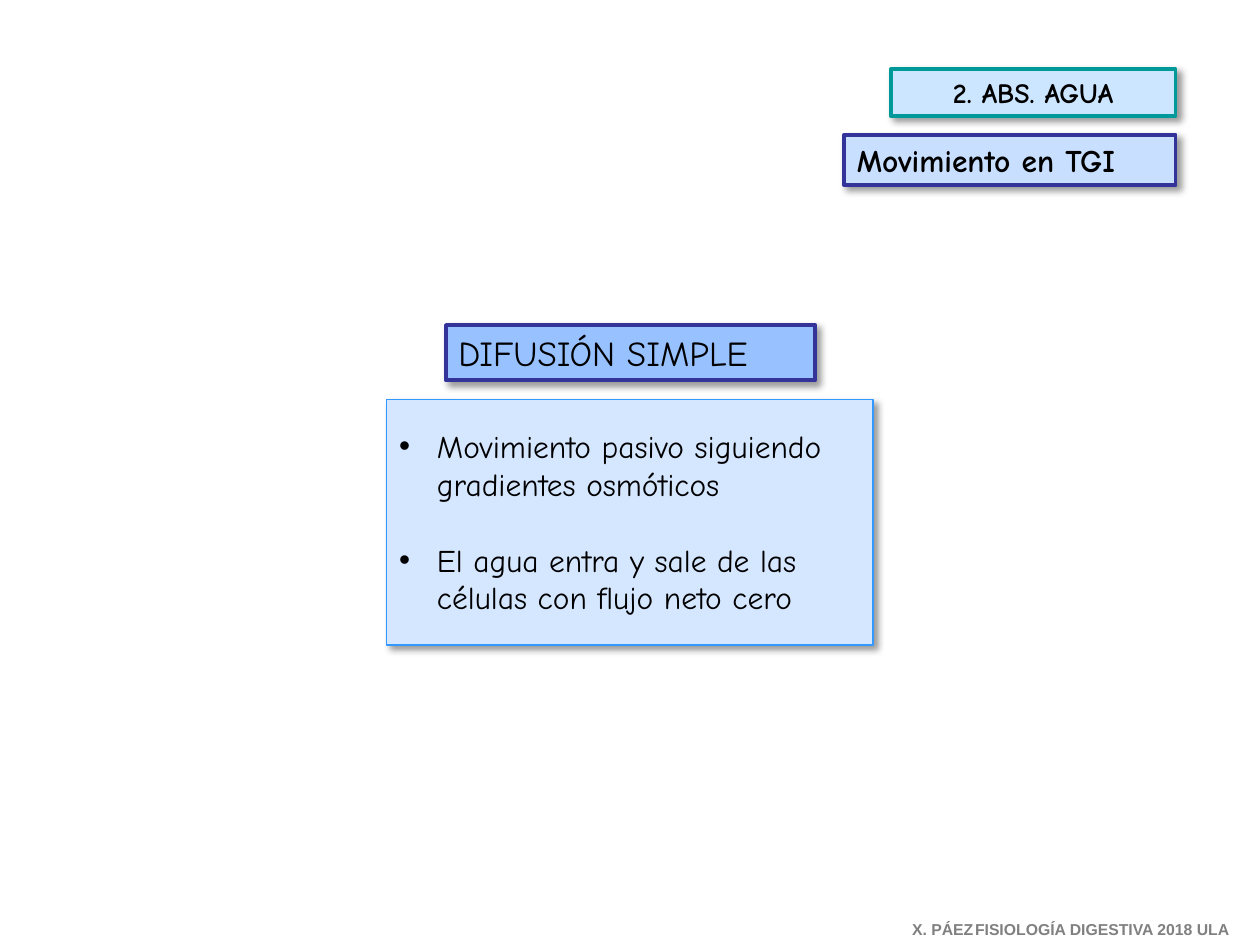
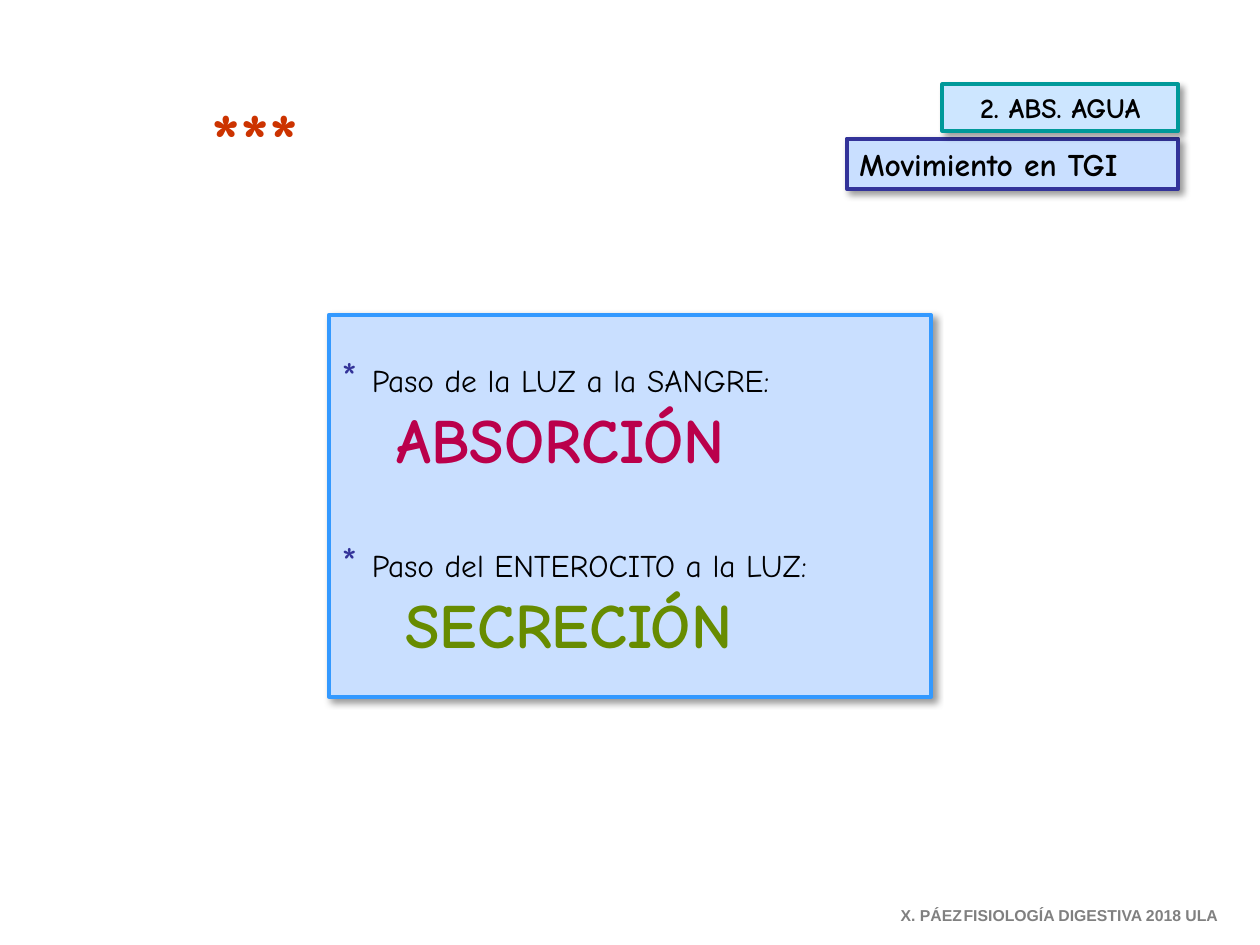
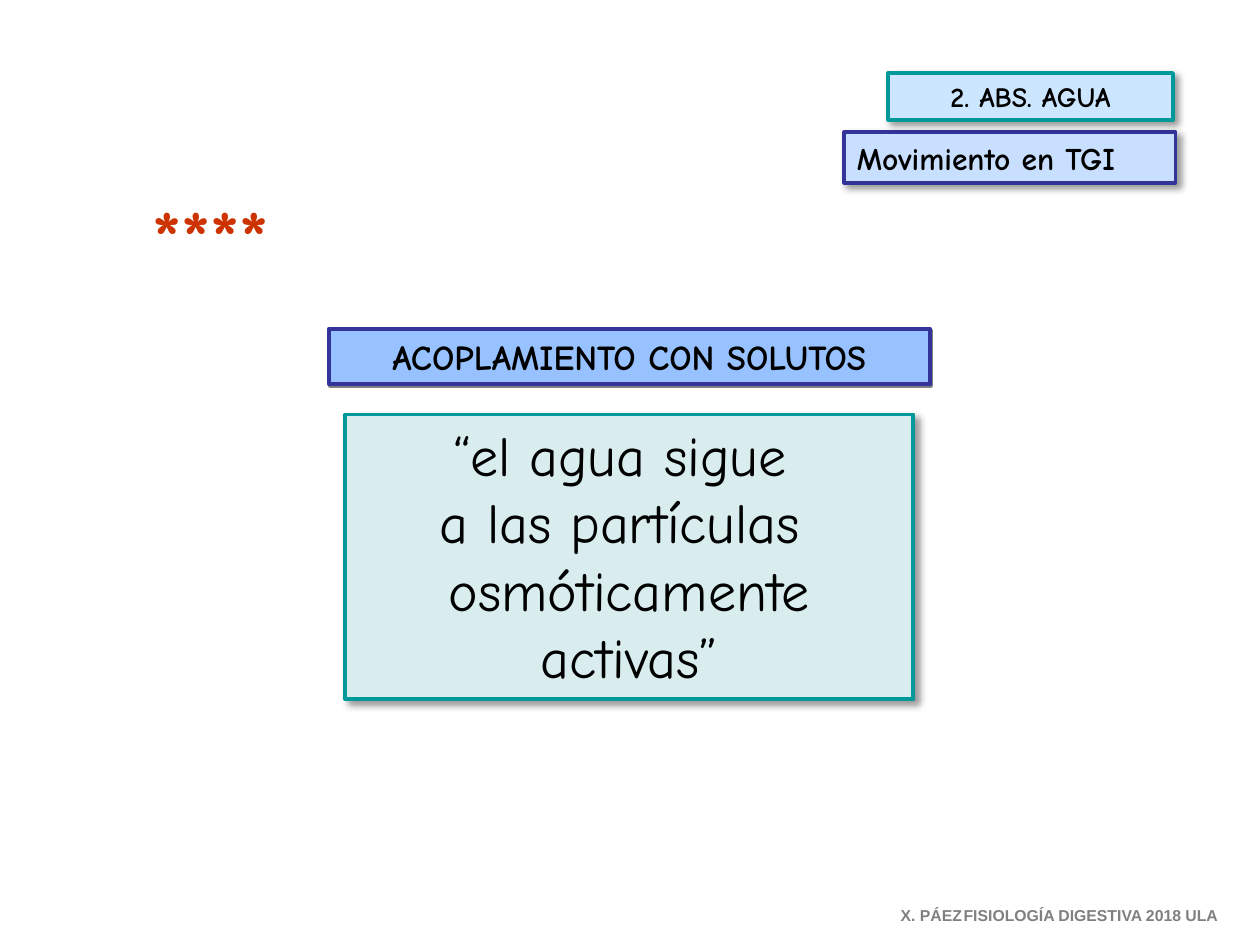
from dataclasses import dataclass

from lxml.etree import SubElement
from pptx import Presentation
from pptx.dml.color import RGBColor
from pptx.enum.shapes import MSO_SHAPE
from pptx.enum.text import MSO_ANCHOR, MSO_AUTO_SIZE, PP_ALIGN
from pptx.oxml.ns import qn
from pptx.util import Inches, Pt


@dataclass(frozen=True)
class Theme:
    font: str = "Comic Neue"
    footer_font: str = "Arial"
    black: str = "000000"
    grey: str = "808080"
    navy: str = "333399"
    sky: str = "3399FF"
    teal: str = "009999"
    pale_cyan: str = "CDE6FF"
    pale_blue: str = "C9DFFF"
    light_blue: str = "D5E6FF"
    mid_blue: str = "97C1FF"
    pale_teal: str = "D9EDEF"
    red: str = "CC3300"
    crimson: str = "BA004B"
    olive: str = "678C00"
    footer_size: int = 9
    tag_size: int = 16
    body_size: int = 18
    heading_size: int = 20
    star_size: int = 24
    quote_size: int = 32
    term_size: int = 36
    rating_size: int = 44
    thin: float = 0.75
    thick: float = 2.25


THEME = Theme()
# Colour, opacity %, blur pt, distance pt, angle in degrees
SOFT_SHADOW = (THEME.black, 40, 4, 3, 45)
HARD_SHADOW = (THEME.grey, 100, 0, 1, 51)


def set_values(target, values):
    for name, value in values.items():
        setattr(target, name, value)


def add_shadow(effects, shadow):
    color, opacity, blur, distance, angle = shadow
    outer = SubElement(effects, qn("a:outerShdw"), blurRad=str(Pt(blur)),
                       dist=str(Pt(distance)), dir=str(angle * 60000),
                       algn="ctr", rotWithShape="0")
    fill = SubElement(outer, qn("a:srgbClr"), val=color)
    SubElement(fill, qn("a:alpha"), val=str(opacity * 1000))


def place(shape, box):
    lengths = [Inches(value) for value in box]
    set_values(shape, dict(zip(("left", "top", "width", "height"), lengths)))


def prepare_text(shape, top_margin=0.05):
    set_values(shape.text_frame, {
        "word_wrap": True, "auto_size": MSO_AUTO_SIZE.NONE,
        "vertical_anchor": MSO_ANCHOR.TOP,
        "margin_left": Inches(0.1), "margin_right": Inches(0.1),
        "margin_top": Inches(top_margin), "margin_bottom": Inches(0.05)})


def style_panel(shape, box, fill, line, width=THEME.thick,
                shadow=SOFT_SHADOW, top_margin=0.05):
    place(shape, box)
    shape.fill.solid()
    shape.fill.fore_color.rgb = RGBColor.from_string(fill)
    shape.line.color.rgb = RGBColor.from_string(line)
    shape.line.width = Pt(width)
    shape.shadow.inherit = False
    add_shadow(shape.element.spPr.find(qn("a:effectLst")), shadow)
    prepare_text(shape, top_margin)
    return shape


def add_panel(slide, box, fill, line, **options):
    shape = slide.shapes.add_shape(MSO_SHAPE.RECTANGLE, 0, 0, 0, 0)
    return style_panel(shape, box, fill, line, **options)


def add_text_box(slide, box):
    shape = slide.shapes.add_textbox(0, 0, 0, 0)
    place(shape, box)
    prepare_text(shape)
    return shape


def add_run(paragraph, text, size, color=THEME.black, bold=False, name=THEME.font):
    run = paragraph.add_run()
    run.text = text
    set_values(run.font, {"size": Pt(size), "bold": bold, "name": name})
    run.font.color.rgb = RGBColor.from_string(color)
    return run


def next_paragraph(shape, centred=False, space_before=0, indent=0.0, hanging=0.0):
    frame = shape.text_frame
    first = frame.paragraphs[0]
    paragraph = frame.add_paragraph() if first.runs else first
    set_values(paragraph, {
        "alignment": PP_ALIGN.CENTER if centred else PP_ALIGN.LEFT,
        "space_before": Pt(space_before), "space_after": Pt(0)})
    properties = paragraph._p.get_or_add_pPr()
    properties.set("marL", str(Inches(indent)))
    properties.set("indent", str(-Inches(hanging)))
    return paragraph


def add_topic(slide, tag_box, title_box):
    """Section tag and, below it, the slide title."""
    title = style_panel(slide.shapes.title, title_box, THEME.pale_blue, THEME.navy)
    add_run(next_paragraph(title), "Movimiento en TGI", THEME.body_size, bold=True)
    tag = add_panel(slide, tag_box, THEME.pale_cyan, THEME.teal)
    add_run(next_paragraph(tag, centred=True), "2. ABS. AGUA", THEME.tag_size, bold=True)


def add_footer(slide, left, top):
    footer = add_text_box(slide, (left, top, 2.9, 0.25))
    paragraph = next_paragraph(footer)
    tabs = SubElement(paragraph._p.get_or_add_pPr(), qn("a:tabLst"))
    SubElement(tabs, qn("a:tab"), pos=str(Inches(0.59)), algn="l")
    add_run(paragraph, "X. PÁEZ\tFISIOLOGÍA DIGESTIVA 2018 ULA", THEME.footer_size,
            THEME.grey, bold=True, name=THEME.footer_font)


def add_rating(slide, box, count):
    """Row of asterisks with a text shadow."""
    rating = add_text_box(slide, box)
    rating.text_frame.word_wrap = False
    run = add_run(next_paragraph(rating), "*" * count, THEME.rating_size,
                  THEME.red, bold=True)
    fill = run.font._element.find(qn("a:solidFill"))
    effects = SubElement(run.font._element, qn("a:effectLst"))
    add_shadow(effects, (THEME.black, 100, 0, 3, 45))
    fill.addnext(effects)


def add_heading(slide, box, text, centred=False, bold=False, shadow=SOFT_SHADOW):
    heading = add_panel(slide, box, THEME.mid_blue, THEME.navy, shadow=shadow)
    add_run(next_paragraph(heading, centred), text, THEME.heading_size, bold=bold)


def add_bullets(slide, box, items):
    panel = add_panel(slide, box, THEME.light_blue, THEME.sky,
                      width=THEME.thin, top_margin=0.22)
    for index, item in enumerate(items):
        paragraph = next_paragraph(panel, space_before=21.6 if index else 0,
                                   indent=0.3, hanging=0.3)
        properties = paragraph._p.get_or_add_pPr()
        SubElement(properties, qn("a:buFont"), typeface="Arial")
        SubElement(properties, qn("a:buChar"), char="•")
        add_run(paragraph, item, THEME.body_size)


def add_definitions(slide, box, definitions):
    """Each definition is a starred sentence with its term in large type below."""
    panel = add_panel(slide, box, THEME.pale_blue, THEME.sky, top_margin=0.28)
    for index, (sentence, term, color, indent) in enumerate(definitions):
        paragraph = next_paragraph(panel, space_before=33.6 if index else 0)
        add_run(paragraph, "* ", THEME.star_size, THEME.navy)
        add_run(paragraph, sentence, THEME.body_size)
        add_run(next_paragraph(panel, indent=indent), term, THEME.term_size,
                color, bold=True)


def add_quote(slide, box, lines):
    panel = add_panel(slide, box, THEME.pale_teal, THEME.teal)
    for line in lines:
        add_run(next_paragraph(panel, centred=True), line, THEME.quote_size)


def build_diffusion(slide):
    add_topic(slide, (7.07, 0.55, 2.26, 0.37), (6.7, 1.07, 2.63, 0.4))
    add_bullets(slide, (3.07, 3.17, 3.86, 1.95), (
        "Movimiento pasivo siguiendo gradientes osmóticos",
        "El agua entra y sale de las células con flujo neto cero"))
    add_heading(slide, (3.54, 2.58, 2.93, 0.44), "DIFUSIÓN SIMPLE")
    add_footer(slide, 7.14, 7.25)


def build_directions(slide):
    add_topic(slide, (7.48, 0.67, 1.87, 0.37), (6.72, 1.1, 2.63, 0.4))
    add_definitions(slide, (2.61, 2.5, 4.78, 3.03), (
        ("Paso de la LUZ a la SANGRE:", "ABSORCIÓN", THEME.crimson, 0.44),
        ("Paso del ENTEROCITO a la LUZ:", "SECRECIÓN", THEME.olive, 0.51)))
    add_rating(slide, (1.58, 0.68, 1.18, 0.84), 3)
    add_footer(slide, 7.05, 7.14)


def build_coupling(slide):
    add_topic(slide, (7.05, 0.58, 2.26, 0.37), (6.7, 1.05, 2.63, 0.4))
    add_quote(slide, (2.74, 3.29, 4.51, 2.26), (
        "“el agua sigue ", "a las partículas ", "osmóticamente activas”"))
    add_heading(slide, (2.61, 2.61, 4.77, 0.44), "ACOPLAMIENTO CON SOLUTOS",
                centred=True, bold=True, shadow=HARD_SHADOW)
    add_rating(slide, (1.11, 1.45, 1.51, 0.84), 4)
    add_footer(slide, 7.05, 7.14)


def main():
    presentation = Presentation()
    set_values(presentation, {"slide_width": Inches(10), "slide_height": Inches(7.5)})
    title_only = presentation.slide_layouts[5]
    for build in (build_diffusion, build_directions, build_coupling):
        build(presentation.slides.add_slide(title_only))
    presentation.save("out.pptx")


if __name__ == "__main__":
    main()
